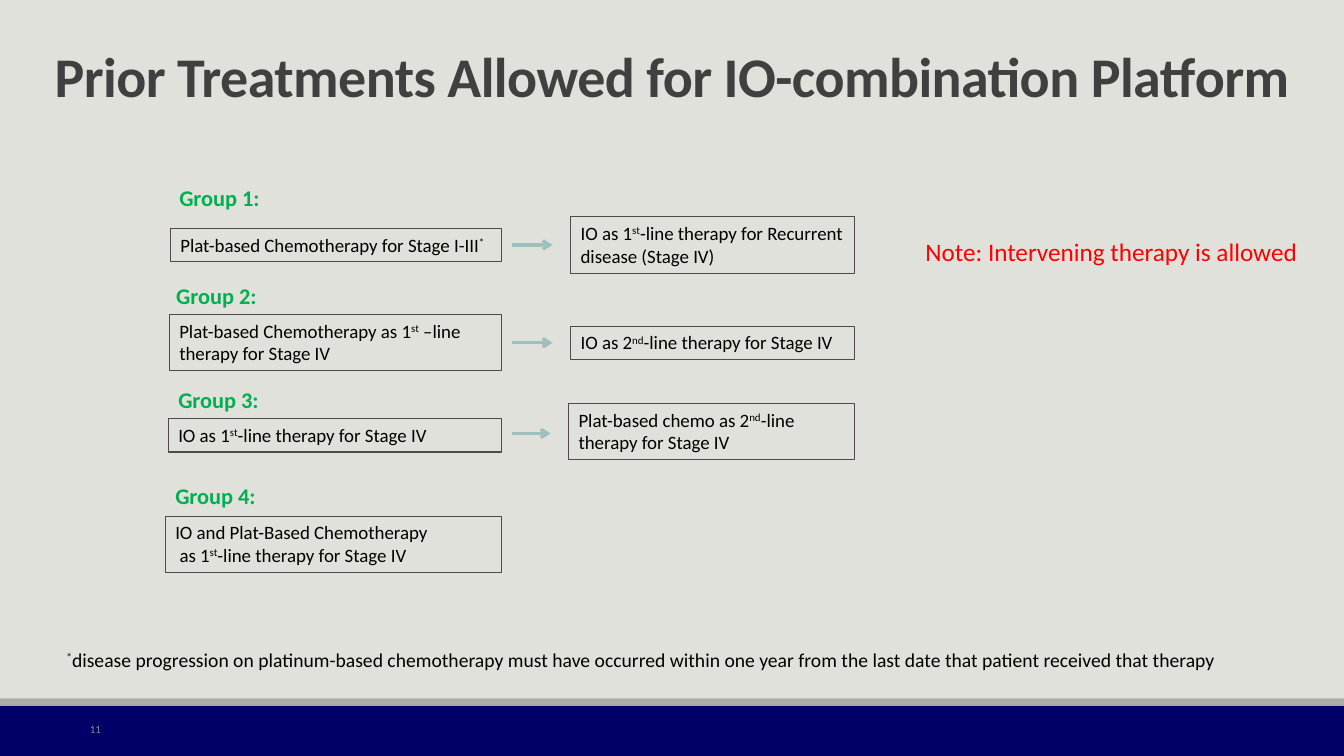
from lxml import etree
from pptx import Presentation
from pptx import util as u
from pptx.dml.color import RGBColor
from pptx.enum import shapes, text
from pptx.oxml.ns import qn

SLIDE_W, SLIDE_H = 13.33, 7.5
TITLE = "Prior Treatments Allowed for IO-combination Platform"
NOTE = "Note: Intervening therapy is allowed"
FOOTNOTE = ("^*^disease progression on platinum-based chemotherapy must have occurred "
            "within one year from the last date that patient received that therapy")
PAGE = "11"

# A treatment is (text, left edge, vertical middle, lines); ^...^ marks superscript.
# A group is (name, (left, top), first treatment, next treatment or None).
GROUPS = [
    ("Group 1:", (1.68, 1.78),
     ("Plat-based Chemotherapy for Stage I-III^*^", 1.69, 2.43, 1),
     ("IO as 1^st^-line therapy for Recurrent disease (Stage IV)", 5.66, 2.43, 2)),
    ("Group 2:", (1.65, 2.75),
     ("Plat-based Chemotherapy as 1^st^ –line therapy for Stage IV", 1.68, 3.4, 2),
     ("IO as 2^nd^-line therapy for Stage IV", 5.66, 3.4, 1)),
    ("Group 3:", (1.67, 3.78),
     ("IO as 1^st^-line therapy for Stage IV", 1.67, 4.32, 1),
     ("Plat-based chemo as 2^nd^-line therapy for Stage IV", 5.64, 4.28, 2)),
    ("Group 4:", (1.64, 4.73),
     ("IO and Plat-Based Chemotherapy\n as 1^st^-line therapy for Stage IV", 1.64, 5.4, 2),
     None),
]
FIRST_RIGHT, NEXT_RIGHT = 4.97, 8.48
ARROW_GAP_BEFORE, ARROW_GAP_AFTER = 0.11, 0.18
BOX_HEIGHT = {1: 0.33, 2: 0.56}


def color(hex_code):
    return RGBColor.from_string(hex_code)


def write(shape, content, size, hex_code, bold=False, wrap=True,
          align=text.PP_ALIGN.LEFT, anchor=text.MSO_ANCHOR.TOP):
    """Fill a shape with text, raising the parts between ^ marks."""
    frame = shape.text_frame
    frame.word_wrap = wrap
    frame.vertical_anchor = anchor
    for i, line in enumerate(content.split("\n")):
        paragraph = frame.add_paragraph() if i else frame.paragraphs[0]
        paragraph.alignment = align
        for j, part in enumerate(line.split("^")):
            if not part:
                continue
            run = paragraph.add_run()
            run.text = part
            run.font.name = "Calibri"
            run.font.size = u.Pt(size)
            run.font.bold = bold
            run.font.color.rgb = color(hex_code)
            if j % 2:
                run.font._element.set("baseline", "30000")


def add_text(slide, area, content, size, hex_code, **style):
    label = slide.shapes.add_textbox(*map(u.Inches, area))
    write(label, content, size, hex_code, **style)


def add_rectangle(slide, *area):
    rectangle = slide.shapes.add_shape(shapes.MSO_SHAPE.RECTANGLE, *map(u.Inches, area))
    rectangle.shadow.inherit = False
    return rectangle


def add_bar(slide, top, height, hex_code):
    bar = add_rectangle(slide, 0, top, SLIDE_W, height)
    bar.fill.solid()
    bar.fill.fore_color.rgb = color(hex_code)
    bar.line.fill.background()


def add_treatment(slide, treatment, right):
    content, left, middle, lines = treatment
    height = BOX_HEIGHT[lines]
    box = add_rectangle(slide, left, middle - height / 2, right - left, height)
    box.fill.background()
    box.line.color.rgb = color("514949")
    box.line.width = u.Pt(0.75)
    write(box, content, 13.5, "000000")


def add_arrow(slide, start, end, y):
    arrow = slide.shapes.add_connector(
        shapes.MSO_CONNECTOR.STRAIGHT, *map(u.Inches, (start, y, end, y)))
    arrow.line.color.rgb = color("9DBFBE")
    arrow.line.width = u.Pt(2.25)
    etree.SubElement(arrow.line._get_or_add_ln(), qn("a:tailEnd"), type="arrow")
    etree.SubElement(arrow._element.spPr, qn("a:effectLst"))


def main():
    deck = Presentation()
    deck.slide_width, deck.slide_height = u.Inches(SLIDE_W), u.Inches(SLIDE_H)
    slide = deck.slides.add_slide(deck.slide_layouts[5])
    slide.background.fill.solid()
    slide.background.fill.fore_color.rgb = color("E1E1DB")

    add_bar(slide, 7, 0.5, "000066")
    add_bar(slide, 6.93, 0.07, "ACADA8")

    title = slide.shapes.title
    title.left, title.top, title.width, title.height = map(
        u.Inches, (0, 0.35, SLIDE_W, 0.78))
    write(title, TITLE, 40, "404040", bold=True,
          align=text.PP_ALIGN.CENTER, anchor=text.MSO_ANCHOR.BOTTOM)
    heading = title.text_frame.paragraphs[0]
    heading.line_spacing = 0.85
    heading.runs[0].font._element.set("spc", "-40")

    for name, (left, top), first, following in GROUPS:
        add_text(slide, (left, top, 1.07, 0.37), name, 16, "00B050", bold=True, wrap=False)
        add_treatment(slide, first, FIRST_RIGHT)
        if following:
            add_treatment(slide, following, NEXT_RIGHT)
            add_arrow(slide, FIRST_RIGHT + ARROW_GAP_BEFORE,
                      following[1] - ARROW_GAP_AFTER, (first[2] + following[2]) / 2)

    add_text(slide, (9.08, 2.3, 4, 0.4), NOTE, 18, "FF0000")
    add_text(slide, (0.56, 6.38, 11.66, 0.34), FOOTNOTE, 14, "000000", wrap=False)
    add_text(slide, (0.07, 7.03, 1.03, 0.4), PAGE, 7.9, "8C8C8C",
             align=text.PP_ALIGN.RIGHT, anchor=text.MSO_ANCHOR.MIDDLE)
    deck.save("out.pptx")


if __name__ == "__main__":
    main()
